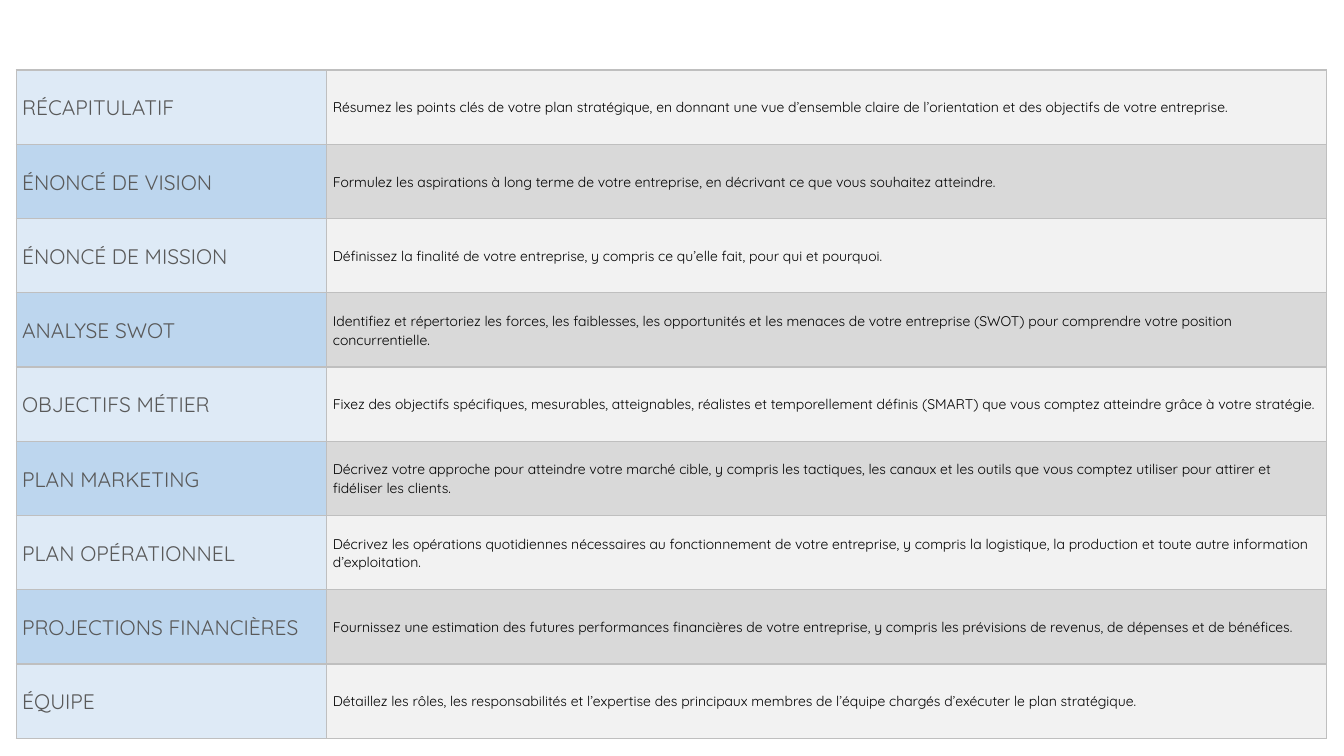
from dataclasses import dataclass

from lxml.etree import SubElement
from pptx import Presentation
from pptx.dml.color import RGBColor as Color
from pptx.enum.text import MSO_ANCHOR as Anchor
from pptx.oxml.ns import qn
from pptx.slide import Slide
from pptx.table import _Cell as Cell
from pptx.util import Pt


@dataclass(frozen=True)
class Theme:
    font: str = "Quicksand"
    heading_size: float = 15
    body_size: float = 10
    heading_color: str = "595959"
    body_color: str = "000000"
    heading_fills: tuple[str, str] = ("DEEAF6", "BDD6EE")
    body_fills: tuple[str, str] = ("F2F2F2", "D9D9D9")
    border_color: str = "BFBFBF"
    border_width: float = 1
    line_spacing: float = 1.07
    side_margin: float = 4.3


@dataclass(frozen=True)
class Section:
    heading: str
    description: str


THEME = Theme()
TABLE_LEFT, TABLE_TOP = 11.5, 50
COLUMN_WIDTHS = (222, 714)
ROW_HEIGHT = 53.05

SECTIONS = (
    Section("RÉCAPITULATIF",
            "Résumez les points clés de votre plan stratégique, en donnant une vue d’ensemble "
            "claire de l’orientation et des objectifs de votre entreprise."),
    Section("ÉNONCÉ DE VISION",
            "Formulez les aspirations à long terme de votre entreprise, en décrivant ce que "
            "vous souhaitez atteindre."),
    Section("ÉNONCÉ DE MISSION",
            "Définissez la finalité de votre entreprise, y compris ce qu’elle fait, pour qui "
            "et pourquoi."),
    Section("ANALYSE SWOT",
            "Identifiez et répertoriez les forces, les faiblesses, les opportunités et les "
            "menaces de votre entreprise (SWOT) pour comprendre votre position "
            "concurrentielle."),
    Section("OBJECTIFS MÉTIER",
            "Fixez des objectifs spécifiques, mesurables, atteignables, réalistes et "
            "temporellement définis (SMART) que vous comptez atteindre grâce à votre "
            "stratégie."),
    Section("PLAN MARKETING",
            "Décrivez votre approche pour atteindre votre marché cible, y compris les "
            "tactiques, les canaux et les outils que vous comptez utiliser pour attirer et "
            "fidéliser les clients."),
    Section("PLAN OPÉRATIONNEL",
            "Décrivez les opérations quotidiennes nécessaires au fonctionnement de votre "
            "entreprise, y compris la logistique, la production et toute autre information "
            "d’exploitation."),
    Section("PROJECTIONS FINANCIÈRES",
            "Fournissez une estimation des futures performances financières de votre "
            "entreprise, y compris les prévisions de revenus, de dépenses et de bénéfices."),
    Section("ÉQUIPE",
            "Détaillez les rôles, les responsabilités et l’expertise des principaux membres "
            "de l’équipe chargés d’exécuter le plan stratégique."),
)


def add_borders(cell: Cell) -> None:
    properties = cell._tc.get_or_add_tcPr()
    for side in ("lnL", "lnR", "lnT", "lnB"):
        line = SubElement(properties, qn(f"a:{side}"), w=str(Pt(THEME.border_width)))
        fill = SubElement(line, qn("a:solidFill"))
        SubElement(fill, qn("a:srgbClr"), val=THEME.border_color)


def write_cell(cell: Cell, text: str, size: float, color: str, fill: str) -> None:
    add_borders(cell)
    cell.fill.solid()
    cell.fill.fore_color.rgb = Color.from_string(fill)
    cell.vertical_anchor = Anchor.MIDDLE
    cell.margin_left = cell.margin_right = Pt(THEME.side_margin)
    cell.margin_top = cell.margin_bottom = Pt(0)
    cell.text_frame.text = text
    paragraph = cell.text_frame.paragraphs[0]
    paragraph.line_spacing = THEME.line_spacing
    font = paragraph.runs[0].font
    font.name = THEME.font
    font.size = Pt(size)
    font.color.rgb = Color.from_string(color)


def add_plan_table(slide: Slide, sections: tuple[Section, ...]) -> None:
    table = slide.shapes.add_table(
        len(sections), len(COLUMN_WIDTHS), Pt(TABLE_LEFT), Pt(TABLE_TOP),
        Pt(sum(COLUMN_WIDTHS)), Pt(ROW_HEIGHT * len(sections))).table
    table.first_row = False
    table.horz_banding = False
    for column, width in zip(table.columns, COLUMN_WIDTHS):
        column.width = Pt(width)
    for index, section in enumerate(sections):
        table.rows[index].height = Pt(ROW_HEIGHT)
        write_cell(table.cell(index, 0), section.heading, THEME.heading_size,
                   THEME.heading_color, THEME.heading_fills[index % 2])
        write_cell(table.cell(index, 1), section.description, THEME.body_size,
                   THEME.body_color, THEME.body_fills[index % 2])


def main() -> None:
    presentation = Presentation()
    presentation.slide_width = Pt(960)
    presentation.slide_height = Pt(540)
    slide = presentation.slides.add_slide(presentation.slide_layouts[6])
    add_plan_table(slide, SECTIONS)
    presentation.save("out.pptx")


if __name__ == "__main__":
    main()
